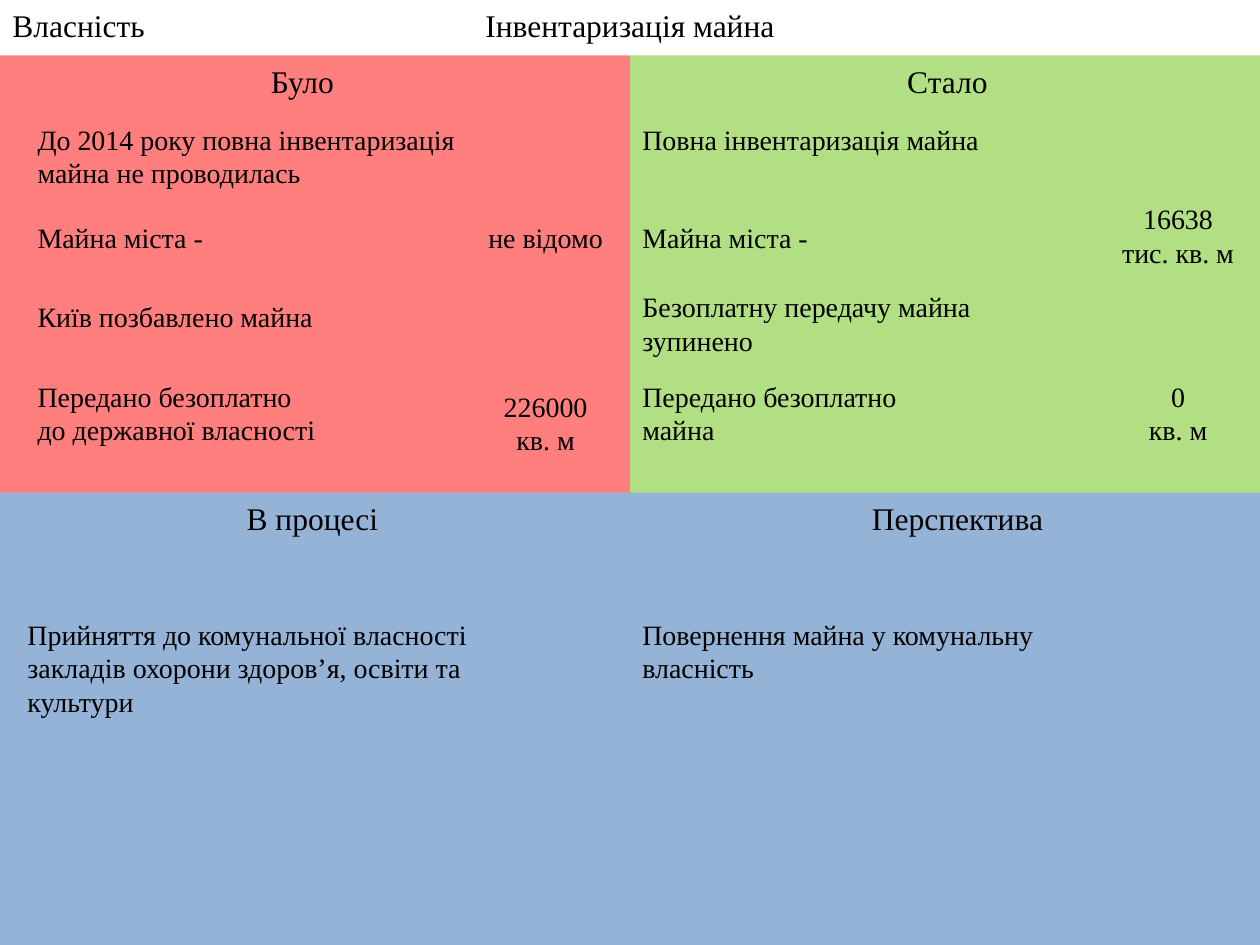
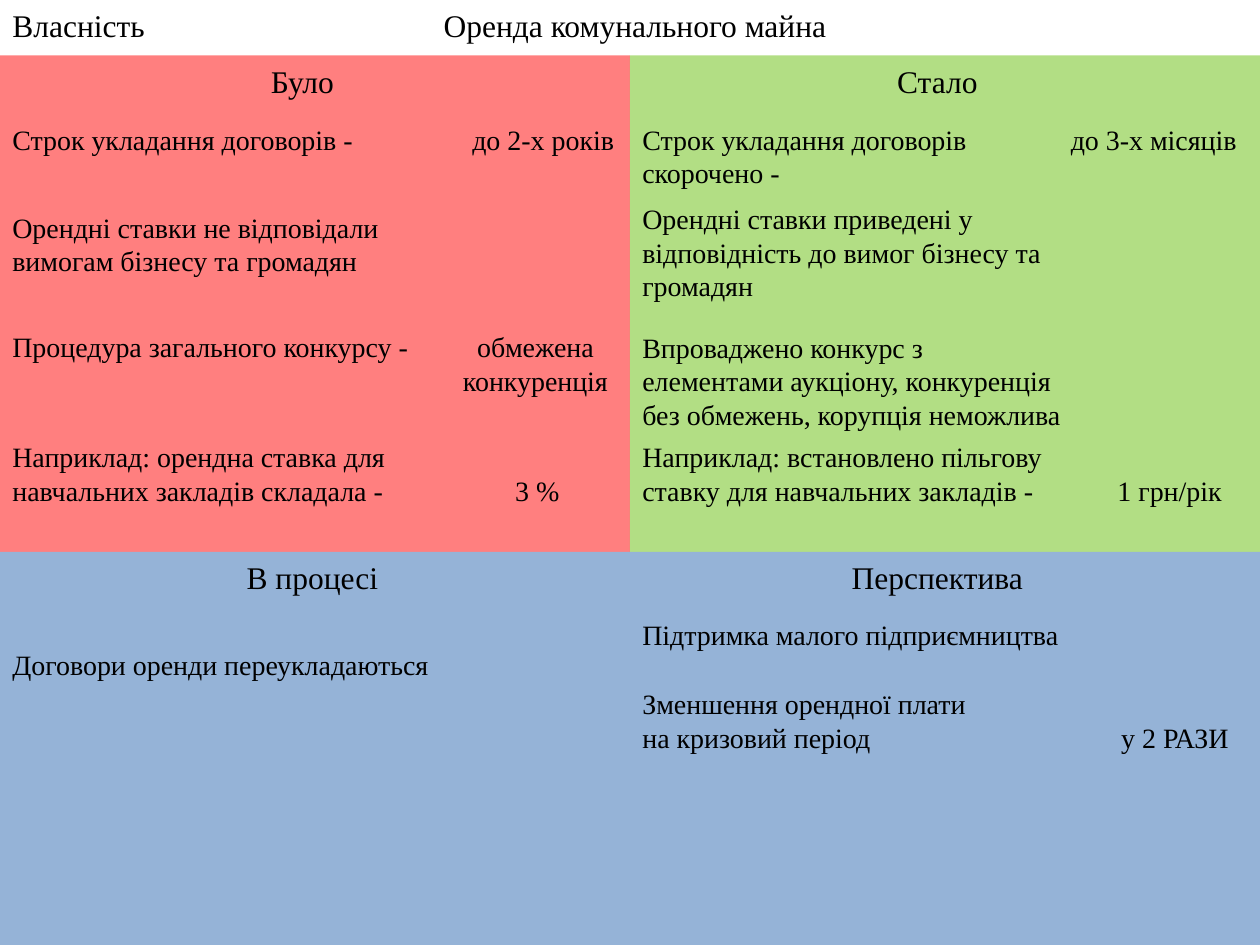
"""Build two before-and-after slides about city property."""
import dataclasses
import typing

import lxml.etree
import pptx
import pptx.dml.color
import pptx.enum.shapes
import pptx.enum.text
import pptx.oxml.ns
import pptx.util

Inches = pptx.util.Inches
LEFT = pptx.enum.text.PP_ALIGN.LEFT
CENTER = pptx.enum.text.PP_ALIGN.CENTER


@dataclasses.dataclass(frozen=True)
class Theme:
    """Colours, opacities and type sizes shared by the slides."""
    font: str = "Times New Roman"
    ink: str = "000000"
    before: tuple = ("FF0000", 50)
    after: tuple = ("92D050", 70)
    plan: tuple = ("95B3D7", 100)
    heading_size: int = 18
    body_size: int = 16


class Box(typing.NamedTuple):
    """A region of the slide in inches."""
    left: float
    top: float
    width: float
    height: float


class Note(typing.NamedTuple):
    """A text placed in inches relative to its quadrant."""
    left: float
    top: float
    width: float
    lines: int
    text: str
    align: typing.Any = LEFT
    tab: float = 0


class Quadrant(typing.NamedTuple):
    """A coloured quarter with its heading and notes."""
    heading: str
    heading_left: float
    fill: tuple
    notes: list


THEME = Theme()
SLIDE_WIDTH, SLIDE_HEIGHT = 10, 7.5
HALF = SLIDE_WIDTH / 2
HEADER_HEIGHT = 0.44
HEADING_HEIGHT = 0.4
HEADING_WIDTH = 2.36


def apply_format(target, values):
    """Set the attributes named in a dict of format values."""
    for name, value in values.items():
        setattr(target, name, value)


def add_tab_stop(paragraph, position):
    """Give a paragraph one left tab stop."""
    properties = paragraph._p.get_or_add_pPr()
    stops = lxml.etree.SubElement(properties, pptx.oxml.ns.qn("a:tabLst"))
    lxml.etree.SubElement(stops, pptx.oxml.ns.qn("a:tab"),
                          pos=str(Inches(position)), algn="l")


def add_text(slide, box, text, size, align=LEFT, tab=0):
    """Add a wrapped text box with one paragraph per line of text."""
    frame = slide.shapes.add_textbox(*map(Inches, box)).text_frame
    apply_format(frame, {
        "word_wrap": True,
        "auto_size": pptx.enum.text.MSO_AUTO_SIZE.SHAPE_TO_FIT_TEXT,
    })
    for index, line in enumerate(text.split("\n")):
        paragraph = frame.add_paragraph() if index else frame.paragraphs[0]
        paragraph.alignment = align
        if "\t" in line:
            add_tab_stop(paragraph, tab)
        run = paragraph.add_run()
        run.text = line
        apply_format(run.font, {"name": THEME.font, "size": pptx.util.Pt(size)})
        run.font.color.rgb = pptx.dml.color.RGBColor.from_string(THEME.ink)


def add_panel(slide, box, fill):
    """Add a borderless rectangle with the given colour and opacity."""
    colour, opacity = fill
    panel = slide.shapes.add_shape(
        pptx.enum.shapes.MSO_SHAPE.RECTANGLE, *map(Inches, box))
    panel.shadow.inherit = False
    panel.line.fill.background()
    panel.fill.solid()
    panel.fill.fore_color.rgb = pptx.dml.color.RGBColor.from_string(colour)
    if opacity < 100:
        tone = panel._element.spPr.find(".//" + pptx.oxml.ns.qn("a:srgbClr"))
        lxml.etree.SubElement(tone, pptx.oxml.ns.qn("a:alpha"),
                              val=str(opacity * 1000))


def add_header(slide, box, topic, topic_left, topic_width):
    """Add the section name and the centred topic."""
    add_text(slide, Box(box.left, box.top, 2.48, HEADING_HEIGHT),
             "Власність", THEME.heading_size)
    add_text(slide, Box(box.left + topic_left, box.top, topic_width, HEADING_HEIGHT),
             topic, THEME.heading_size, CENTER)


def add_quadrant(slide, box, quadrant):
    """Add a panel, its heading and its notes inside a box."""
    add_panel(slide, box, quadrant.fill)
    add_text(slide, Box(box.left + quadrant.heading_left, box.top,
                        HEADING_WIDTH, HEADING_HEIGHT),
             quadrant.heading, THEME.heading_size, CENTER)
    for note in quadrant.notes:
        place = Box(box.left + note.left, box.top + note.top,
                    note.width, 0.1 + 0.27 * note.lines)
        add_text(slide, place, note.text, THEME.body_size, note.align, note.tab)


def add_comparison(deck, topic, topic_left, topic_width, upper_height, split, quadrants):
    """Add a slide with a header above four quadrants."""
    slide = deck.slides.add_slide(deck.slide_layouts[6])
    add_header(slide, Box(0, 0, SLIDE_WIDTH, HEADER_HEIGHT),
               topic, topic_left, topic_width)
    rows = [(HEADER_HEIGHT, upper_height), (split, SLIDE_HEIGHT - split)]
    for index, quadrant in enumerate(quadrants):
        top, height = rows[index // 2]
        add_quadrant(slide, Box(index % 2 * HALF, top, HALF, height), quadrant)


INVENTORY = [
    Quadrant("Було", 1.22, THEME.before, [
        Note(0.2, 0.48, 3.86, 2, "До 2014 року повна інвентаризація майна не проводилась"),
        Note(0.2, 1.26, 1.57, 1, "Майна міста -"),
        Note(3.74, 1.26, 1.18, 1, "не відомо", CENTER),
        Note(0.2, 1.89, 2.44, 1, "Київ позбавлено майна"),
        Note(0.2, 2.52, 2.44, 2, "Передано безоплатно до державної власності"),
        Note(3.74, 2.6, 1.18, 2, "226000\nкв. м", CENTER),
    ]),
    Quadrant("Стало", 1.34, THEME.after, [
        Note(0, 0.48, 5, 1, "Повна інвентаризація майна"),
        Note(0, 1.26, 1.57, 1, "Майна міста -"),
        Note(3.7, 1.11, 1.3, 2, "16638\nтис. кв. м", CENTER),
        Note(0, 1.81, 3.07, 2, "Безоплатну передачу майна зупинено"),
        Note(0, 2.52, 2.76, 2, "Передано безоплатно майна"),
        Note(3.7, 2.52, 1.3, 2, "0\nкв. м", CENTER),
    ]),
    Quadrant("В процесі", 1.3, THEME.plan, [
        Note(0.12, 0.94, 3.86, 3, "Прийняття до комунальної власності\n"
             "закладів охорони здоров’я, освіти та культури"),
    ]),
    Quadrant("Перспектива", 1.42, THEME.plan, [
        Note(0, 0.94, 3.86, 2, "Повернення майна у комунальну власність"),
    ]),
]

LEASING = [
    Quadrant("Було", 1.22, THEME.before, [
        Note(0, 0.48, 5, 1, "Строк укладання договорів -\tдо 2-х років", tab=3.65),
        Note(0, 1.18, 3.5, 2, "Орендні ставки не відповідали вимогам бізнесу та громадян"),
        Note(0, 2.13, 3.5, 1, "Процедура загального конкурсу -"),
        Note(3.5, 2.13, 1.5, 2, "обмежена конкуренція", CENTER),
        Note(0, 3, 5, 2, "Наприклад: орендна ставка для\n"
             "навчальних закладів складала -\t3 %", tab=3.99),
    ]),
    Quadrant("Стало", 1.26, THEME.after, [
        Note(0, 0.48, 5, 2, "Строк укладання договорів\tдо 3-х місяців\nскорочено -", tab=3.4),
        Note(0, 1.11, 3.54, 3, "Орендні ставки приведені у відповідність "
             "до вимог бізнесу та громадян"),
        Note(0, 2.13, 3.54, 4, "Впроваджено конкурс з елементами аукціону, "
             "конкуренція без обмежень, корупція неможлива"),
        Note(0, 3, 5, 2, "Наприклад: встановлено пільгову\n"
             "ставку для навчальних закладів -\t1 грн/рік", tab=3.77),
    ]),
    Quadrant("В процесі", 1.3, THEME.plan, [
        Note(0, 0.71, 3.58, 1, "Договори оренди переукладаються"),
    ]),
    Quadrant("Перспектива", 1.26, THEME.plan, [
        Note(0, 0.47, 5, 1, "Підтримка малого підприємництва"),
        Note(0, 1.02, 5, 2, "Зменшення орендної плати\n"
             "на кризовий період\tу 2 РАЗИ", tab=3.8),
    ]),
]


def main():
    """Build and save the deck."""
    deck = pptx.Presentation()
    apply_format(deck, {"slide_width": Inches(SLIDE_WIDTH),
                        "slide_height": Inches(SLIDE_HEIGHT)})
    add_comparison(deck, "Інвентаризація майна", 3.74, 2.52, 3.7, 3.91, INVENTORY)
    add_comparison(deck, "Оренда комунального майна", 1.93, 6.22, 3.94, 4.38, LEASING)
    deck.save("out.pptx")


if __name__ == "__main__":
    main()
